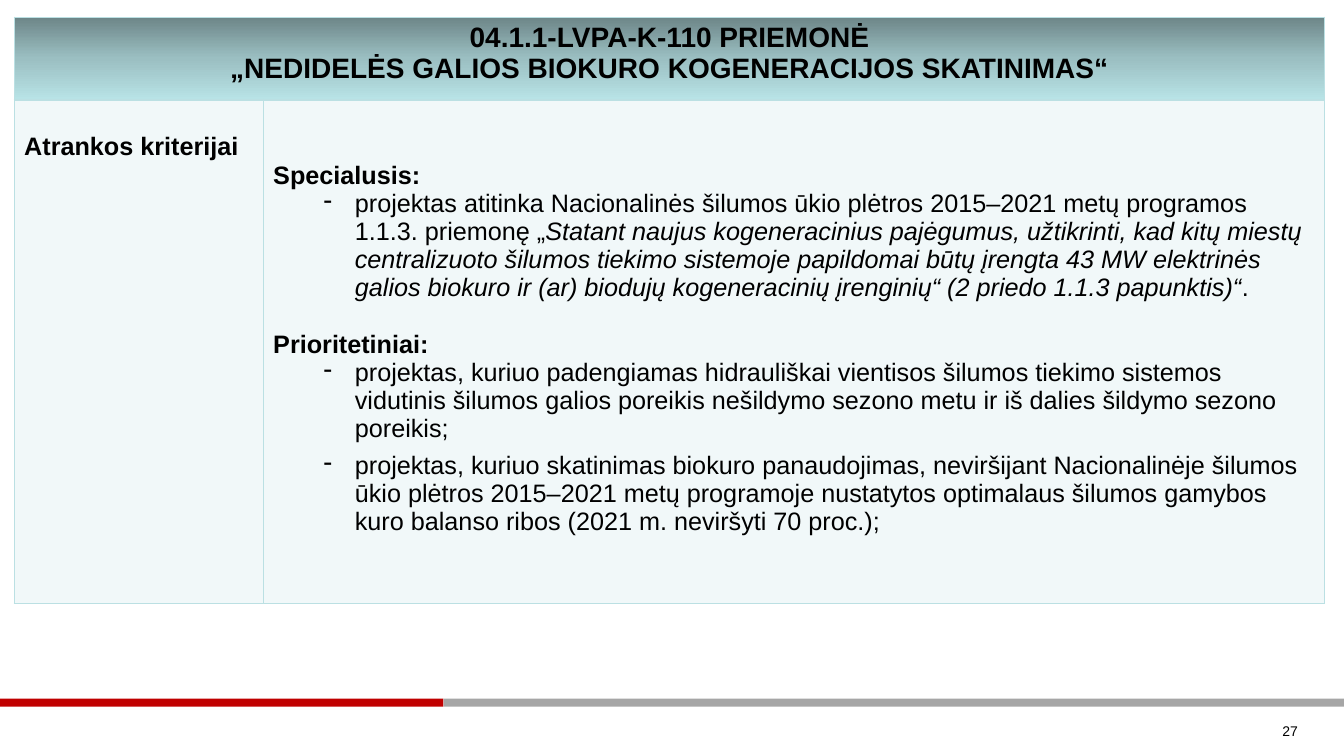
from pptx import Presentation
from pptx.dml.color import RGBColor
from pptx.enum.shapes import MSO_SHAPE
from pptx.enum.text import MSO_ANCHOR, PP_ALIGN
from pptx.oxml import parse_xml
from pptx.oxml.ns import nsdecls
from pptx.util import Emu, Inches, Pt

RECT = MSO_SHAPE.RECTANGLE
MIDDLE = MSO_ANCHOR.MIDDLE
CENTER, RIGHT = PP_ALIGN.CENTER, PP_ALIGN.RIGHT
W, H = Inches(13.33), Inches(7.5)
TEAL = "BBE0E3"
HEADER_STOPS = [(0, "6D8688"), (50, "9BBFC2"), (100, "B8E3E6")]
COLS, ROWS = (2.47, 10.53), (0.82, 5)

TITLE = ["04.1.1-LVPA-K-110 PRIEMONĖ",
         "„NEDIDELĖS GALIOS BIOKURO KOGENERACIJOS SKATINIMAS“"]
SPECIAL = [
    ("projektas atitinka Nacionalinės šilumos ūkio plėtros 2015–2021 metų "
     "programos 1.1.3. priemonę „", False),
    ("Statant naujus kogeneracinius pajėgumus, užtikrinti, kad kitų miestų "
     "centralizuoto šilumos tiekimo sistemoje papildomai būtų įrengta 43 MW "
     "elektrinės galios biokuro ir (ar) biodujų kogeneracinių įrenginių“ "
     "(2 priedo 1.1.3 papunktis)“", True),
    (".", False)]
PRIORITY = [
    "projektas, kuriuo padengiamas hidrauliškai vientisos šilumos tiekimo "
    "sistemos vidutinis šilumos galios poreikis nešildymo sezono metu ir iš "
    "dalies šildymo sezono poreikis;",
    "projektas, kuriuo skatinimas biokuro panaudojimas, neviršijant "
    "Nacionalinėje šilumos ūkio plėtros 2015–2021 metų programoje nustatytos "
    "optimalaus šilumos gamybos kuro balanso ribos (2021 m. neviršyti 70 proc.);"]


def rgb(color):
    """Turn a hex string into a colour."""
    return RGBColor.from_string(color)


def add_bar(s, left, width, color):
    """Draw one part of the footer bar, in shares of the slide width."""
    sp = s.shapes.add_shape(RECT, Emu(int(W * left)), Inches(6.93),
                            Emu(int(W * width)), Inches(0.08))
    sp.shadow.inherit = False
    sp.fill.solid()
    sp.fill.fore_color.rgb = rgb(color)
    sp.line.fill.background()


def format_runs(p, size, bold=False):
    """Set the font of every run in a paragraph."""
    for r in p.runs:
        r.font.name = "Arial"
        r.font.size = Pt(size)
        r.font.bold = bold
        r.font.color.rgb = rgb("000000")


def add_paragraph(tf, runs, size=18, bold=False, bullet=False, before=0, after=0):
    """Add a paragraph of (text, italic) runs, using the empty first one if free."""
    first = tf.paragraphs[0]
    p = tf.add_paragraph() if first.runs else first
    if bullet:
        p.level = 1
        pPr = p._p.get_or_add_pPr()
        pPr.set("marL", str(Inches(0.81)))
        pPr.set("indent", str(Inches(-0.31)))
        pPr.append(parse_xml(f'<a:buChar {nsdecls("a")} char="-"/>'))
    for text, italic in runs:
        r = p.add_run()
        r.text = text
        r.font.italic = italic
    p.space_before, p.space_after = Pt(before), Pt(after)
    format_runs(p, size, bold)
    return p


def style_cell(cell, fill, bottom=1):
    """Give a cell its borders and then its fill."""
    tcPr = cell._tc.get_or_add_tcPr()
    for side, width in zip("LRTB", (1, 1, 1, bottom)):
        tcPr.append(parse_xml(
            f'<a:ln{side} {nsdecls("a")} w="{Pt(width)}"><a:solidFill>'
            f'<a:srgbClr val="{TEAL}"/></a:solidFill></a:ln{side}>'))
    tcPr.append(parse_xml(fill))


def gradient(stops):
    """Return a vertical gradient fill."""
    gs = "".join(f'<a:gs pos="{pos * 1000}"><a:srgbClr val="{color}"/></a:gs>'
                 for pos, color in stops)
    return (f'<a:gradFill {nsdecls("a")}><a:gsLst>{gs}</a:gsLst>'
            '<a:lin ang="5400000" scaled="0"/></a:gradFill>')


def tint(color, opacity):
    """Return a partly transparent solid fill."""
    return (f'<a:solidFill {nsdecls("a")}><a:srgbClr val="{color}">'
            f'<a:alpha val="{opacity * 1000}"/></a:srgbClr></a:solidFill>')


def add_criteria_table(s):
    """Add the table with the measure's name and its selection criteria."""
    table = s.shapes.add_table(2, 2, Inches(0.14), Inches(0.17),
                               Inches(sum(COLS)), Inches(sum(ROWS))).table
    table.first_row = table.horz_banding = False
    for col, width in zip(table.columns, COLS):
        col.width = Inches(width)
    for row, height in zip(table.rows, ROWS):
        row.height = Inches(height)
    for cell in table.rows[0].cells:
        style_cell(cell, gradient(HEADER_STOPS), bottom=2)
    for cell in table.rows[1].cells:
        style_cell(cell, tint(TEAL, 20))

    header, label, body = table.cell(0, 0), table.cell(1, 0), table.cell(1, 1)
    header.merge(table.cell(0, 1))
    for line in TITLE:
        p = add_paragraph(header.text_frame, [(line, False)], 20, bold=True)
        p.alignment = CENTER

    label.margin_top = Inches(0.33)
    add_paragraph(label.text_frame, [("Atrankos kriterijai", False)], bold=True)

    body.margin_top = Inches(0.61)
    tf = body.text_frame
    add_paragraph(tf, [("Specialusis:", False)], bold=True)
    add_paragraph(tf, SPECIAL, bullet=True)
    add_paragraph(tf, [("Prioritetiniai:", False)], bold=True, before=20)
    for text in PRIORITY:
        add_paragraph(tf, [(text, False)], bullet=True, after=6)


def add_page_number(s, number):
    """Add the page number at the lower right."""
    tf = s.shapes.add_textbox(Inches(9.86), Inches(7.01),
                              Inches(3.11), Inches(0.49)).text_frame
    tf.word_wrap = True
    tf.vertical_anchor = MIDDLE
    add_paragraph(tf, [(number, False)], 10).alignment = RIGHT


def main():
    """Build the slide."""
    prs = Presentation()
    prs.slide_width, prs.slide_height = W, H
    s = prs.slides.add_slide(prs.slide_layouts[6])
    add_bar(s, 0, 0.33, "C00000")
    add_bar(s, 0.33, 0.67, "A6A6A6")
    add_criteria_table(s)
    add_page_number(s, "27")
    prs.save("out.pptx")


if __name__ == "__main__":
    main()
